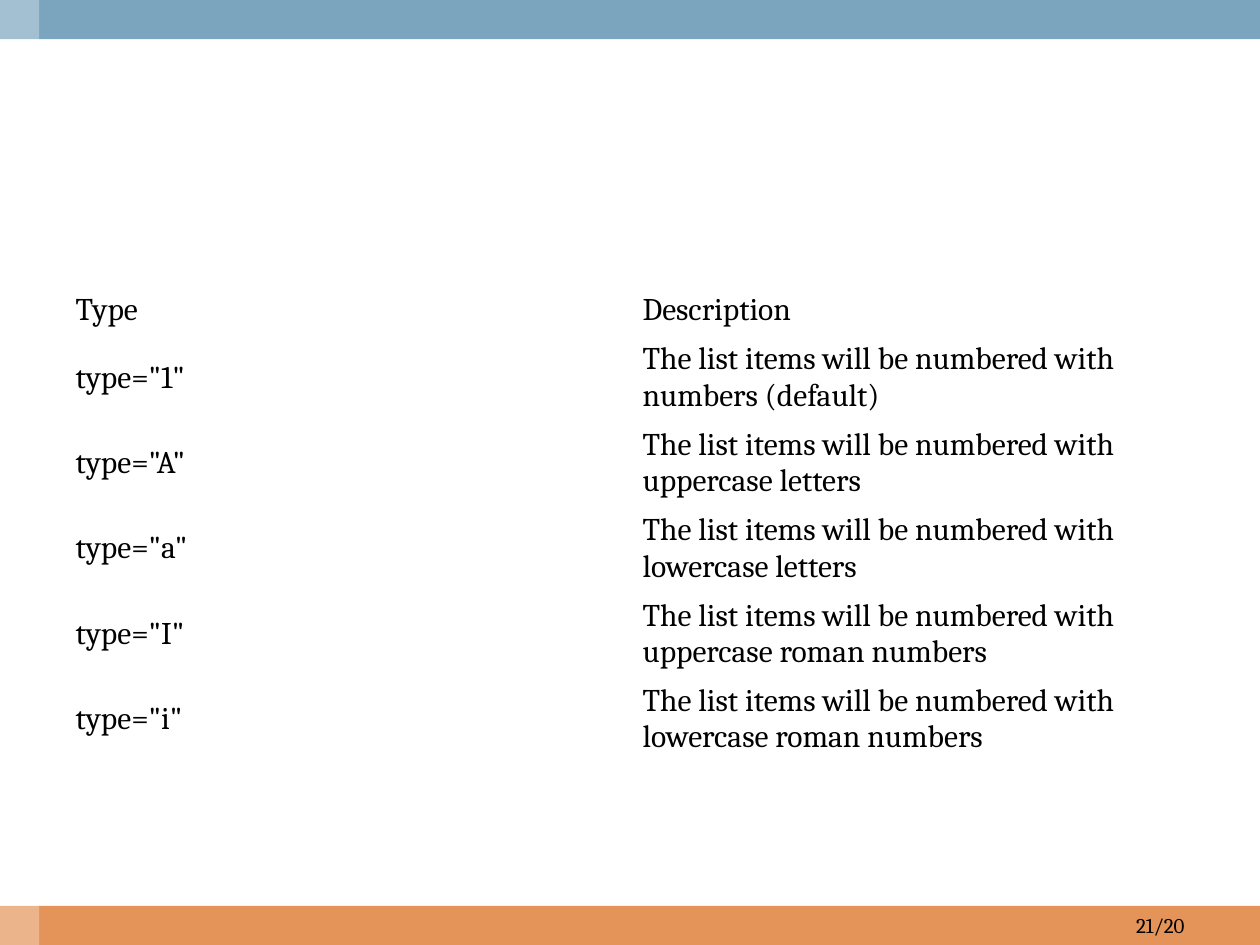
"""Build a slide listing the ordered list type values of HTML."""
from lxml.etree import SubElement
from pptx import Presentation
from pptx.dml.color import RGBColor
from pptx.enum.shapes import MSO_SHAPE as Shape
from pptx.enum.text import MSO_ANCHOR as Anchor, PP_ALIGN as Align
from pptx.oxml.ns import qn
from pptx.util import Pt

COLORS = {"orange": "E49458", "blue": "7BA5BE", "white": "FFFFFF", "black": "000000"}
WIDTH, HEIGHT, BAND = 720, 540, 22.4
MARGIN = 36


def add_band(left, top, width, height, color):
    band = slide.shapes.add_shape(Shape.RECTANGLE, Pt(left), Pt(top), Pt(width), Pt(height))
    band.shadow.inherit = False
    band.fill.solid()
    band.fill.fore_color.rgb = RGBColor.from_string(COLORS[color])
    band.line.fill.background()
    return band


def add_run(paragraph, text, size):
    run = paragraph.add_run()
    run.text = text
    run.font.name = "Cambria"
    run.font.size = Pt(size)
    run.font.color.rgb = RGBColor.from_string(COLORS["black"])


deck = Presentation()
deck.slide_width, deck.slide_height = Pt(WIDTH), Pt(HEIGHT)
slide = deck.slides.add_slide(deck.slide_layouts[6])

add_band(0, HEIGHT - BAND, WIDTH, BAND, "orange")
add_band(0, 0, WIDTH, BAND, "blue")
veil = add_band(0, 0, BAND, HEIGHT, "white")
veil_color = veil.fill._xPr.find(qn("a:solidFill"))[0]
SubElement(veil_color, qn("a:alpha"), val="30000")

numberings = {
    "1": "numbers (default)",
    "A": "uppercase letters",
    "a": "lowercase letters",
    "I": "uppercase roman numbers",
    "i": "lowercase roman numbers",
}
entries = [("Type", "Description")] + [
    (f'type="{key}"', f"The list items will be numbered with {numbering}")
    for key, numbering in numberings.items()
]
row_heights = [28.2] + [48.8] * len(numberings)

list_types = slide.shapes.add_table(
    len(entries), 2, Pt(MARGIN), Pt(163.4), Pt(WIDTH - 2 * MARGIN), Pt(sum(row_heights))
).table
list_types.first_row = False
list_types.horz_banding = False
for row, height, entry in zip(list_types.rows, row_heights, entries):
    row.height = Pt(height)
    for cell, text in zip(row.cells, entry):
        cell.fill.background()
        cell.vertical_anchor = Anchor.MIDDLE
        add_run(cell.text_frame.paragraphs[0], text, 18)

page_number = slide.shapes.add_textbox(
    Pt(WIDTH - MARGIN - 168), Pt(HEIGHT - BAND), Pt(168), Pt(BAND)
).text_frame
page_number.word_wrap = True
page_number.vertical_anchor = Anchor.MIDDLE
page_number.paragraphs[0].alignment = Align.RIGHT
add_run(page_number.paragraphs[0], "21/20", 12)

deck.save("out.pptx")
